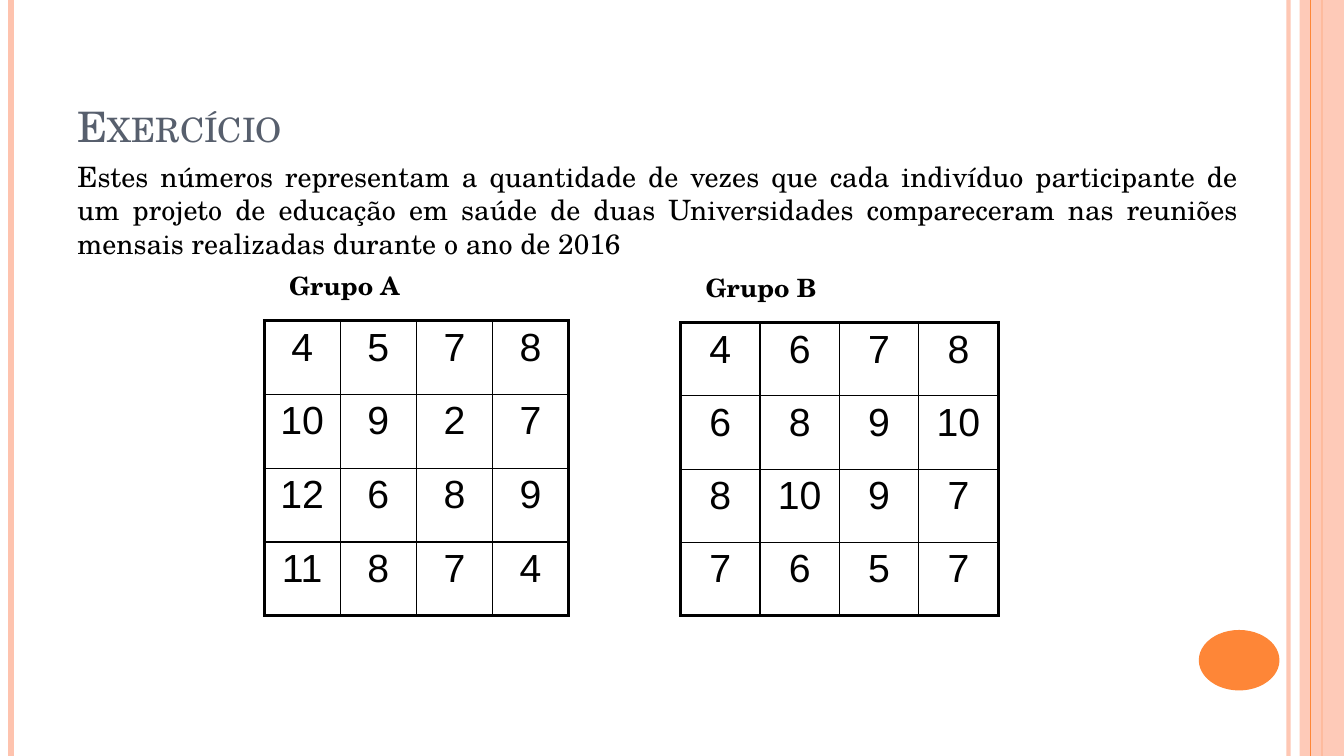
from lxml.etree import SubElement
from pptx import Presentation
from pptx.dml.color import RGBColor
from pptx.enum.shapes import MSO_CONNECTOR, MSO_SHAPE
from pptx.enum.text import MSO_ANCHOR, PP_ALIGN
from pptx.oxml.ns import qn
from pptx.util import Inches, Pt

SERIF, SANS = "TeX Gyre Schola", "Arial"
BLACK, SLATE, PEACH, ORANGE = "000000", "575F6D", "FEC3AE", "FE8637"
WIDTH, HEIGHT = 13.33, 7.5
GROUP_A = [[4, 5, 7, 8], [10, 9, 2, 7], [12, 6, 8, 9], [11, 8, 7, 4]]
GROUP_B = [[4, 6, 7, 8], [6, 8, 9, 10], [8, 10, 9, 7], [7, 6, 5, 7]]
STATEMENT = (
    "Estes números representam a quantidade de vezes que cada indivíduo "
    "participante de um projeto de educação em saúde de duas Universidades "
    "compareceram nas reuniões mensais realizadas durante o ano de 2016"
)


def paint(color_format, color, opacity=100):
    color_format.rgb = RGBColor.from_string(color)
    if opacity < 100:
        node = color_format._xFill.find(qn("a:srgbClr"))
        SubElement(node, qn("a:alpha"), val=str(opacity * 1000))


def write(frame, text, color=BLACK, align=PP_ALIGN.LEFT, **font_format):
    para = frame.paragraphs[0]
    para.alignment = align
    span = para.add_run()
    span.text = text
    for name, value in font_format.items():
        setattr(span.font, name, value)
    paint(span.font.color, color)
    return span


def add_bar(page, x, color, weight, opacity=100):
    """Draw a vertical line over the full height of the page."""
    bar = page.shapes.add_connector(
        MSO_CONNECTOR.STRAIGHT, Inches(x), 0, Inches(x), Inches(HEIGHT))
    bar.line.width = Pt(weight)
    bar.line.fill.solid()
    paint(bar.line.fill.fore_color, color, opacity)
    SubElement(bar._element.spPr, qn("a:effectLst"))


def add_plain_shape(page, kind, box, color, opacity=100):
    shape = page.shapes.add_shape(kind, *map(Inches, box))
    shape.shadow.inherit = False
    shape.line.fill.background()
    shape.fill.solid()
    paint(shape.fill.fore_color, color, opacity)


def add_decoration(page):
    add_bar(page, 12.78, PEACH, 3, 93)
    add_bar(page, 0.11, PEACH, 4.5)
    add_bar(page, 13.11, ORANGE, 1.5)
    add_plain_shape(page, MSO_SHAPE.RECTANGLE, (12.89, 0, 0.44, HEIGHT), PEACH, 87)
    add_bar(page, 13, ORANGE, 0.75)
    add_plain_shape(page, MSO_SHAPE.OVAL, (11.89, 6.25, 0.8, 0.6), ORANGE)


def add_title(page, text, box):
    title = page.shapes.title
    for name, value in zip(("left", "top", "width", "height"), box):
        setattr(title, name, Inches(value))
    title.text_frame.vertical_anchor = MSO_ANCHOR.BOTTOM
    span = write(title.text_frame, text, SLATE, name=SERIF, size=Pt(30))
    span.font._element.set("cap", "small")


def add_text(page, text, box, wrap=True, **text_format):
    frame = page.shapes.add_textbox(*map(Inches, box)).text_frame
    frame.word_wrap = wrap
    write(frame, text, name=SERIF, **text_format)


def add_border(cell, side, weight):
    line = SubElement(cell._tc.get_or_add_tcPr(), qn(f"a:ln{side}"), w=str(Pt(weight)))
    fill = SubElement(line, qn("a:solidFill"))
    SubElement(fill, qn("a:srgbClr"), val=BLACK)


def add_group(page, name, values, box):
    """Place a number grid in the box, with its heading just above."""
    left, top, width, height = box
    add_text(page, name, (left + 0.15, top - 0.55, 1.3, 0.4), wrap=False,
             size=Pt(18), bold=True)
    rows, columns = len(values), len(values[0])
    table = page.shapes.add_table(rows, columns, *map(Inches, box)).table
    table.first_row = table.horz_banding = False
    for column in table.columns:
        column.width = Inches(width / columns)
    for row in table.rows:
        row.height = Inches(height / rows)
    for r, numbers in enumerate(values):
        for c, number in enumerate(numbers):
            cell = table.cell(r, c)
            outer = {"L": c == 0, "R": c == columns - 1, "T": r == 0, "B": r == rows - 1}
            for side, is_outer in outer.items():
                add_border(cell, side, 2.25 if is_outer else 1)
            cell.fill.background()
            write(cell.text_frame, str(number), align=PP_ALIGN.CENTER,
                  name=SANS, size=Pt(28))


def main():
    deck = Presentation()
    deck.slide_width, deck.slide_height = Inches(WIDTH), Inches(HEIGHT)
    page = deck.slides.add_slide(deck.slide_layouts.get_by_name("Title Only"))
    add_decoration(page)
    add_title(page, "Exercício", (0.67, 0.3, 12, 1.25))
    add_text(page, STATEMENT, (0.67, 1.53, 11.71, 1.11),
             align=PP_ALIGN.JUSTIFY, size=Pt(20))
    add_group(page, "Grupo A", GROUP_A, (2.62, 3.18, 3.02, 2.93))
    add_group(page, "Grupo B", GROUP_B, (6.75, 3.2, 3.15, 2.91))
    deck.save("out.pptx")


if __name__ == "__main__":
    main()
